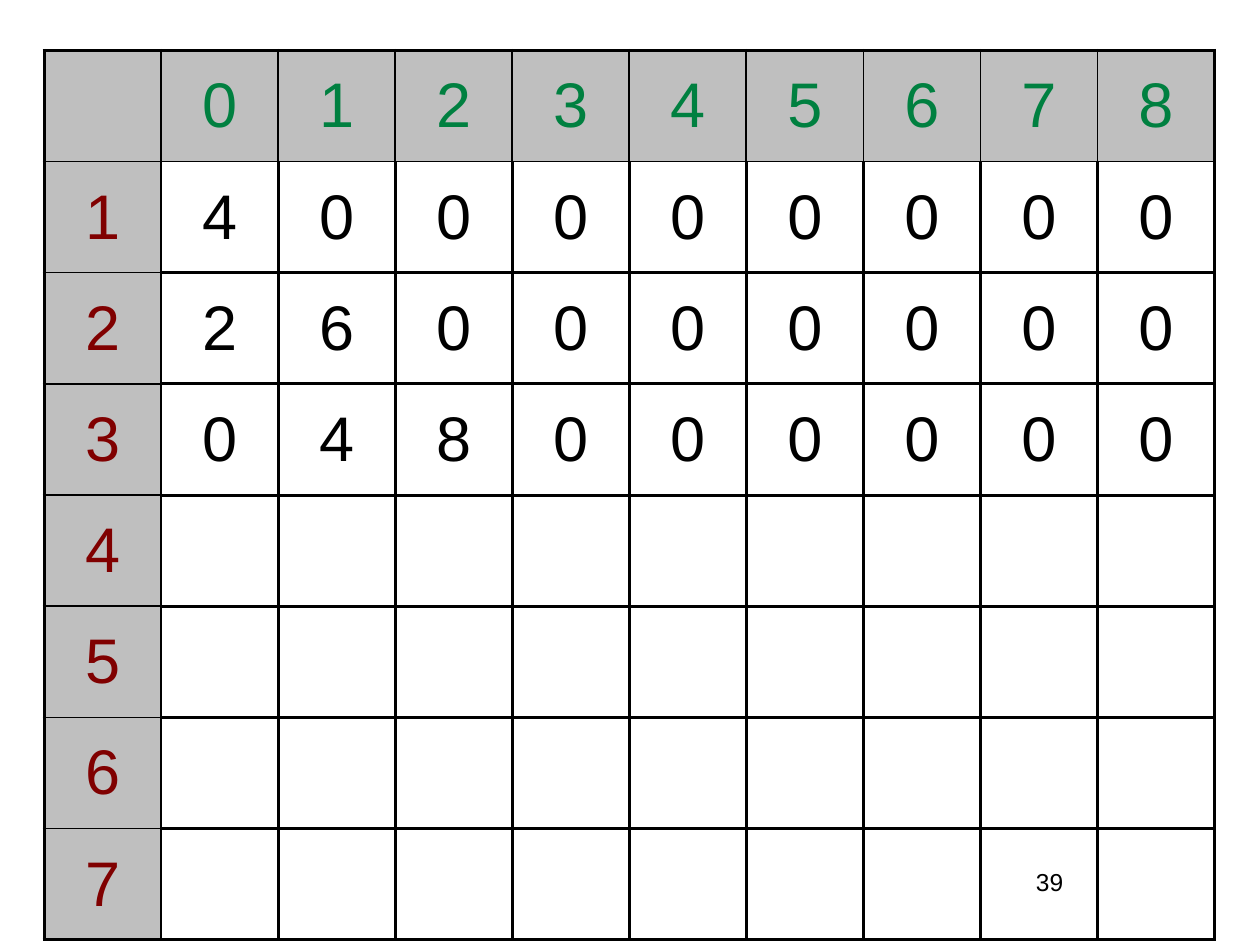
import lxml.etree
import pptx
import pptx.dml.color
import pptx.enum.text
import pptx.oxml.ns
import pptx.util
from pptx.util import Inches

COLORS = {
    "black": "000000",
    "column_label": "008040",
    "row_label": "800000",
}
FONT = "Arial"
HEADER_OPACITY = 25
THIN, THICK = 1, 2

COLUMN_LABELS = ["", "0", "1", "2", "3", "4", "5", "6", "7", "8"]
ROW_LABELS = ["1", "2", "3", "4", "5", "6", "7"]
VALUES = [
    [4, 0, 0, 0, 0, 0, 0, 0, 0],
    [2, 6, 0, 0, 0, 0, 0, 0, 0],
    [0, 4, 8, 0, 0, 0, 0, 0, 0],
]


def write_text(text_frame, text, size, color):
    paragraph = text_frame.paragraphs[0]
    paragraph.alignment = pptx.enum.text.PP_ALIGN.CENTER
    run = paragraph.add_run()
    run.text = text
    run.font.name = FONT
    run.font.size = pptx.util.Pt(size)
    run.font.color.rgb = pptx.dml.color.RGBColor.from_string(color)


def add_child(parent, tag, **attributes):
    child = lxml.etree.SubElement(parent, pptx.oxml.ns.qn(tag))
    for name, value in attributes.items():
        child.set(name, str(value))
    return child


def set_borders(cell, row, column, last_row, last_column):
    """Draw outer and body lines thick, and lines along header cells thin."""
    thick_sides = {
        "L": column == 0 or (row > 0 and column > 1),
        "R": column == last_column or (row > 0 and column > 0),
        "T": row == 0 or (column > 0 and row > 1),
        "B": row == last_row or (column > 0 and row > 0),
    }
    properties = cell._tc.get_or_add_tcPr()
    for side, is_thick in thick_sides.items():
        width = pptx.util.Pt(THICK if is_thick else THIN)
        line = add_child(properties, f"a:ln{side}", w=int(width))
        fill = add_child(line, "a:solidFill")
        add_child(fill, "a:srgbClr", val=COLORS["black"])


def set_fill(cell, is_header):
    if not is_header:
        cell.fill.background()
        return
    cell.fill.solid()
    cell.fill.fore_color.rgb = pptx.dml.color.RGBColor.from_string(COLORS["black"])
    solid_fill = cell._tc.tcPr.find(pptx.oxml.ns.qn("a:solidFill"))
    add_child(solid_fill[0], "a:alpha", val=HEADER_OPACITY * 1000)


def cell_content(row, column):
    """Return the text and colour of a cell."""
    if row == 0:
        return COLUMN_LABELS[column], COLORS["column_label"]
    if column == 0:
        return ROW_LABELS[row - 1], COLORS["row_label"]
    if row <= len(VALUES):
        return str(VALUES[row - 1][column - 1]), COLORS["black"]
    return "", COLORS["black"]


def add_value_table(slide, left, top, width, height):
    row_count, column_count = len(ROW_LABELS) + 1, len(COLUMN_LABELS)
    table = slide.shapes.add_table(
        row_count, column_count, left, top, width, height
    ).table
    table.first_row = False
    table.horz_banding = False
    for row in range(row_count):
        for column in range(column_count):
            cell = table.cell(row, column)
            cell.vertical_anchor = pptx.enum.text.MSO_ANCHOR.MIDDLE
            cell.margin_left = cell.margin_right = Inches(0.04)
            cell.margin_top = cell.margin_bottom = Inches(0.04)
            set_borders(cell, row, column, row_count - 1, column_count - 1)
            set_fill(cell, row == 0 or column == 0)
            text, color = cell_content(row, column)
            if text:
                write_text(cell.text_frame, text, size=36, color=color)


def add_page_number(slide, left, top, width, height):
    text_frame = slide.shapes.add_textbox(left, top, width, height).text_frame
    text_frame.word_wrap = False
    text_frame.margin_left = text_frame.margin_right = 0
    write_text(text_frame, "39", size=14, color=COLORS["black"])


def main():
    presentation = pptx.Presentation()
    presentation.slide_width = Inches(10)
    presentation.slide_height = Inches(7.5)
    slide = presentation.slides.add_slide(presentation.slide_layouts[6])
    add_page_number(slide, Inches(8.16), Inches(6.83), Inches(0.34), Inches(0.33))
    add_value_table(slide, Inches(0.35), Inches(0.4), Inches(9.29), Inches(7.06))
    presentation.save("out.pptx")


if __name__ == "__main__":
    main()
